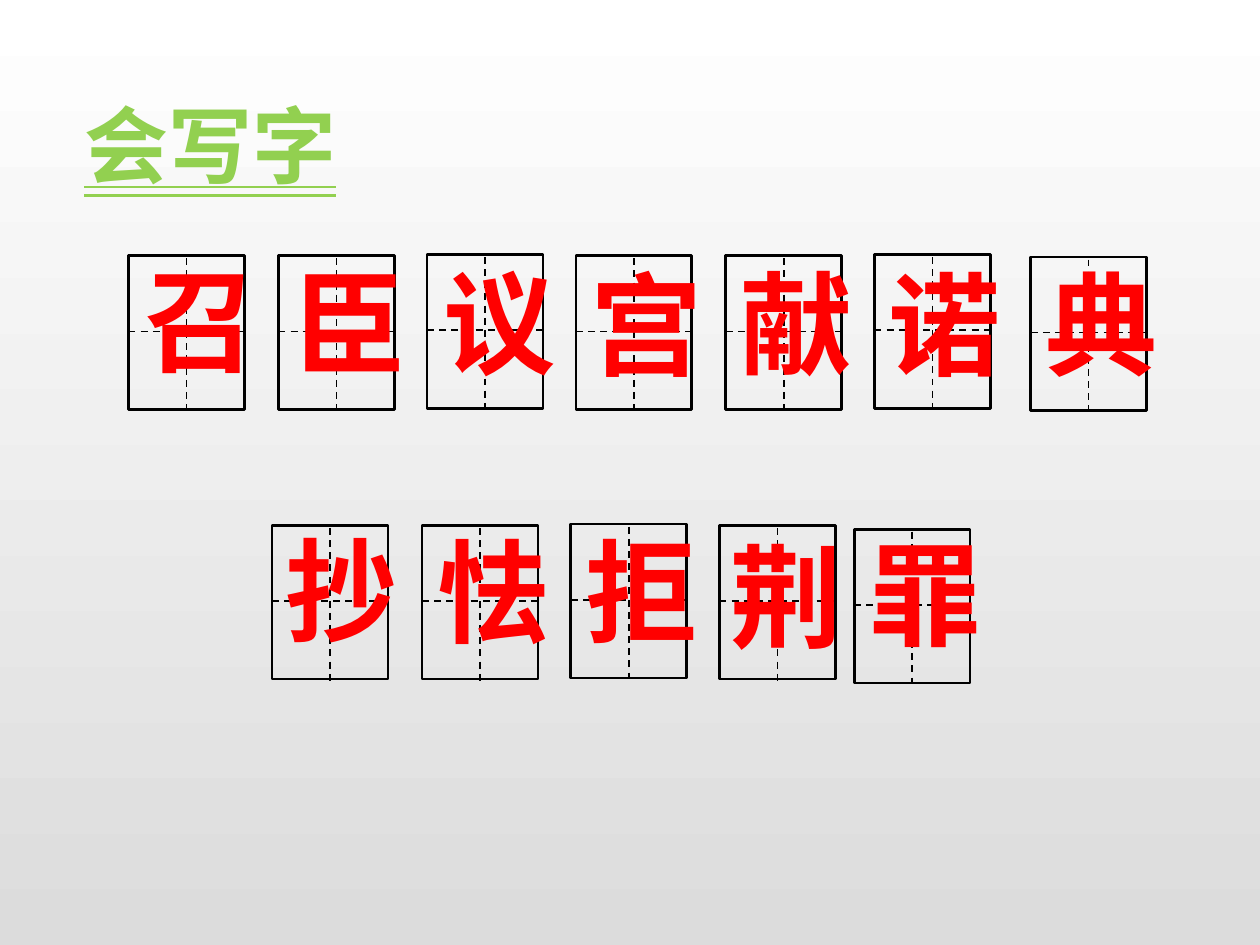
from typing import NamedTuple

from lxml.etree import SubElement
from pptx import Presentation
from pptx.dml.color import RGBColor
from pptx.enum.dml import MSO_LINE
from pptx.enum.shapes import MSO_CONNECTOR, MSO_SHAPE
from pptx.enum.text import MSO_AUTO_SIZE, MSO_UNDERLINE
from pptx.oxml.ns import qn
from pptx.util import Inches, Pt

FONT = "Noto Sans CJK SC"
BOX_WIDTH, BOX_HEIGHT = 0.92, 1.22
TEXT_WIDTH, TEXT_HEIGHT = 0.89, 1.18


class PracticeCell(NamedTuple):
    character: str
    left: float
    top: float
    text_left: float
    text_top: float


CELLS = [
    PracticeCell("召", 1.02, 2.03, 1.05, 1.95),
    PracticeCell("臣", 2.21, 2.03, 2.24, 1.96),
    PracticeCell("议", 3.39, 2.02, 3.42, 1.96),
    PracticeCell("宫", 4.57, 2.03, 4.59, 1.98),
    PracticeCell("献", 5.76, 2.03, 5.78, 1.97),
    PracticeCell("诺", 6.94, 2.02, 6.95, 1.98),
    PracticeCell("典", 8.18, 2.04, 8.20, 1.98),
    PracticeCell("抄", 2.16, 4.17, 2.17, 4.09),
    PracticeCell("怯", 3.35, 4.17, 3.37, 4.10),
    PracticeCell("拒", 4.53, 4.16, 4.55, 4.10),
    PracticeCell("荆", 5.71, 4.17, 5.70, 4.14),
    PracticeCell("罪", 6.78, 4.20, 6.80, 4.12),
]


def color(hex_value: str) -> RGBColor:
    return RGBColor.from_string(hex_value)


def paint_background(slide) -> None:
    fill = slide.background.fill
    fill.gradient()
    fill.gradient_angle = 270
    for stop, hex_value in zip(fill.gradient_stops, ("FFFFFF", "DCDCDC")):
        stop.color.rgb = color(hex_value)


def add_text(slide, text: str, left: float, top: float, width: float, height: float,
             size: int, hex_value: str, wrap: bool = True):
    """Add a bold text box and return its font."""
    shape = slide.shapes.add_textbox(Inches(left), Inches(top), Inches(width), Inches(height))
    frame = shape.text_frame
    frame.text = text
    frame.word_wrap = wrap
    frame.auto_size = MSO_AUTO_SIZE.SHAPE_TO_FIT_TEXT
    font = frame.paragraphs[0].runs[0].font
    font.size = Pt(size)
    font.bold = True
    font.color.rgb = color(hex_value)
    font.name = FONT
    SubElement(font._element, qn("a:ea")).set("typeface", FONT)
    return font


def add_guide(group, x1: float, y1: float, x2: float, y2: float) -> None:
    """Add a dashed guide line to a practice box."""
    guide = group.shapes.add_connector(
        MSO_CONNECTOR.STRAIGHT, Inches(x1), Inches(y1), Inches(x2), Inches(y2))
    guide.line.color.rgb = color("000000")
    guide.line.width = Pt(1)
    guide.line.dash_style = MSO_LINE.DASH
    SubElement(guide._element.spPr, qn("a:effectLst"))


def add_practice_cell(slide, cell: PracticeCell) -> None:
    group = slide.shapes.add_group_shape()
    box = group.shapes.add_shape(
        MSO_SHAPE.RECTANGLE, Inches(cell.left), Inches(cell.top),
        Inches(BOX_WIDTH), Inches(BOX_HEIGHT))
    box.shadow.inherit = False
    box.fill.background()
    box.line.color.rgb = color("000000")
    box.line.width = Pt(1.5)

    middle_x, middle_y = cell.left + BOX_WIDTH / 2, cell.top + 0.6
    guide_top = cell.top + 0.02
    add_guide(group, cell.left, middle_y, cell.left + BOX_WIDTH, middle_y)
    add_guide(group, middle_x, guide_top, middle_x, guide_top + BOX_HEIGHT)
    add_text(slide, cell.character, cell.text_left, cell.text_top,
             TEXT_WIDTH, TEXT_HEIGHT, 64, "FF0000")


def main() -> None:
    presentation = Presentation()
    presentation.slide_width = Inches(10)
    presentation.slide_height = Inches(7.5)
    slide = presentation.slides.add_slide(presentation.slide_layouts[6])
    paint_background(slide)
    title_font = add_text(slide, "会写字", 0.57, 0.69, 2.23, 0.91, 48, "92D050", wrap=False)
    title_font.underline = MSO_UNDERLINE.DOUBLE_LINE
    for cell in CELLS:
        add_practice_cell(slide, cell)
    presentation.save("out.pptx")


if __name__ == "__main__":
    main()
